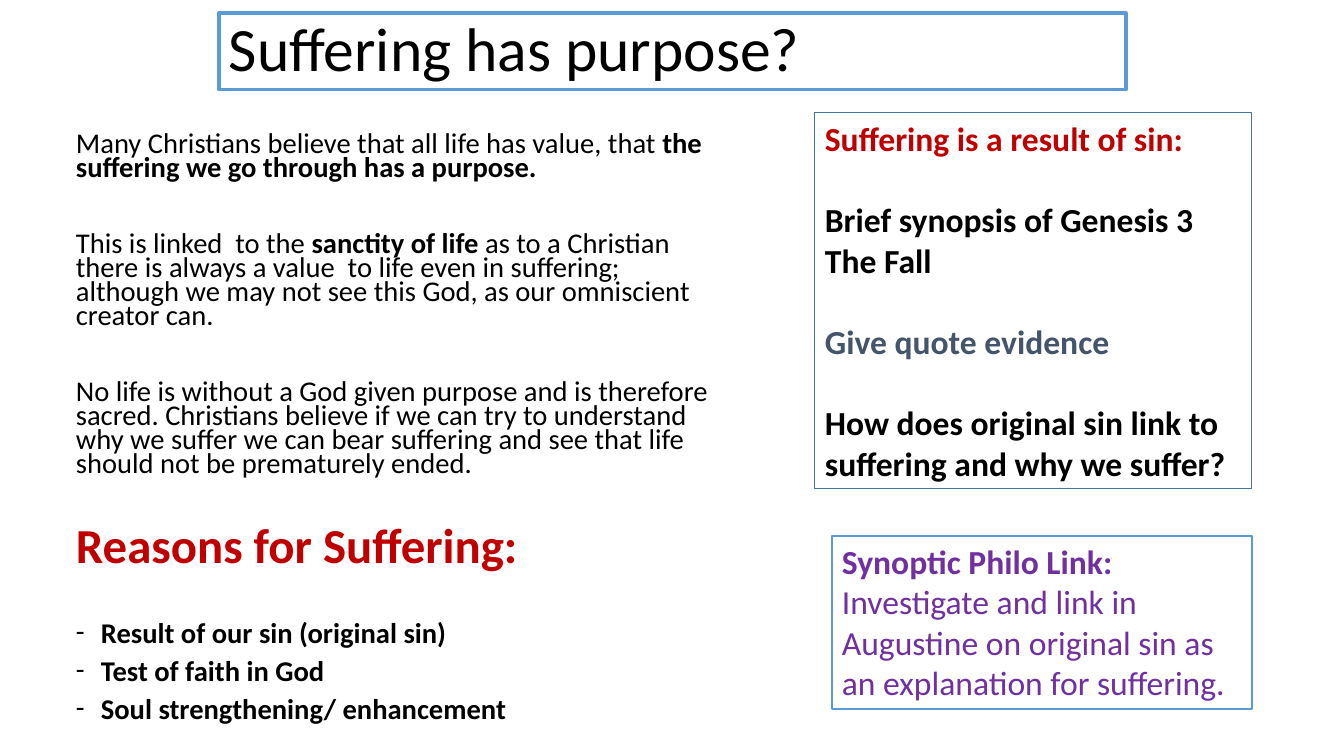
from lxml.etree import SubElement
from pptx import Presentation
from pptx.dml.color import RGBColor
from pptx.enum.shapes import MSO_SHAPE
from pptx.enum.text import MSO_ANCHOR, PP_ALIGN
from pptx.oxml.ns import qn
from pptx.util import Pt

PX = 914400 / 100.8
FONT = "Calibri"
COLOURS = {
    "black": "000000",
    "red": "C00000",
    "slate": "44546A",
    "purple": "7030A0",
    "blue": "5B9BD5",
    "dark_blue": "43739E",
}
BODY_SIZE = 20.4
PROMPT_SIZE = 24
SECTION_GAP = 37.4
BULLET_GAP = 10
PROMPT_GAP = 29.3
BULLET_INDENT = 25

ARGUMENTS = [
    [("Many Christians believe that all life has value, that ", False),
     ("the suffering we go through has a purpose.", True)],
    [("This is linked  to the ", False),
     ("sanctity of life ", True),
     ("as to a Christian there is always a value  to life even in suffering; "
      "although we may not see this God, as our omniscient creator can.", False)],
    [("No life is without a God given purpose and is therefore sacred. "
      "Christians believe if we can try to understand why we suffer we can bear "
      "suffering and see that life should not be prematurely ended.", False)],
]
REASONS = [
    "Result of our sin (original sin)",
    "Test of faith in God",
    "Soul strengthening/ enhancement",
]
SIN_PROMPTS = [
    ("Suffering is a result of sin:", "red"),
    ("Brief synopsis of Genesis 3 The Fall", "black"),
    ("Give quote evidence", "slate"),
    ("How does original sin link to suffering and why we suffer?", "black"),
]
SYNOPTIC_LINK = [
    ("Synoptic Philo Link: ", True),
    ("Investigate and link in Augustine on original sin as an explanation "
     "for suffering.", False),
]


def px(length):
    return round(length * PX)


def rgb(colour):
    return RGBColor.from_string(COLOURS[colour])


def add_frame(slide, box, line_colour, line_width):
    """Add an unfilled outlined rectangle and return its text frame."""
    frame = slide.shapes.add_shape(MSO_SHAPE.RECTANGLE, *map(px, box))
    frame.shadow.inherit = False
    frame.fill.background()
    frame.line.color.rgb = rgb(line_colour)
    frame.line.width = Pt(line_width)
    frame.text_frame.word_wrap = True
    return frame.text_frame


def add_paragraph(text_frame, runs, size, colour="black", **layout):
    """Write (text, bold) runs as the next paragraph of the frame."""
    first = text_frame.paragraphs[0]
    paragraph = text_frame.add_paragraph() if first.runs else first
    for name, value in {"alignment": PP_ALIGN.LEFT, **layout}.items():
        setattr(paragraph, name, value)
    for text, bold in runs:
        run = paragraph.add_run()
        run.text = text
        for name, value in {"name": FONT, "size": Pt(size), "bold": bold}.items():
            setattr(run.font, name, value)
        run.font.color.rgb = rgb(colour)
    return paragraph


def add_dash(paragraph):
    properties = paragraph._p.get_or_add_pPr()
    properties.set("marL", str(px(BULLET_INDENT)))
    properties.set("indent", str(-px(BULLET_INDENT)))
    SubElement(properties, qn("a:buFont"), typeface=FONT)
    SubElement(properties, qn("a:buChar"), char="-")


def title_region(slide, box):
    title = add_frame(slide, box, "blue", 2.25)
    title.vertical_anchor = MSO_ANCHOR.MIDDLE
    add_paragraph(title, [("Suffering has purpose?", False)], 44, line_spacing=0.9)


def argument_region(slide, box):
    argument = slide.shapes.add_textbox(*map(px, box)).text_frame
    argument.word_wrap = True
    section = {"line_spacing": 0.7, "space_before": Pt(SECTION_GAP)}
    bullet = {**section, "space_before": Pt(BULLET_GAP)}
    for index, runs in enumerate(ARGUMENTS):
        add_paragraph(argument, runs, BODY_SIZE, **(section if index else bullet))
    add_paragraph(argument, [("Reasons for Suffering:", True)], 34.9, "red", **section)
    for index, reason in enumerate(REASONS):
        layout = bullet if index else section
        add_dash(add_paragraph(argument, [(reason, True)], BODY_SIZE, **layout))


def sin_region(slide, box):
    prompts = add_frame(slide, box, "dark_blue", 0.75)
    prompts.vertical_anchor = MSO_ANCHOR.TOP
    for index, (prompt, colour) in enumerate(SIN_PROMPTS):
        add_paragraph(prompts, [(prompt, True)], PROMPT_SIZE, colour,
                      space_before=Pt(PROMPT_GAP if index else 0))


def synoptic_region(slide, box):
    synoptic = add_frame(slide, box, "blue", 1.75)
    synoptic.vertical_anchor = MSO_ANCHOR.TOP
    add_paragraph(synoptic, SYNOPTIC_LINK, PROMPT_SIZE, "purple")


def main():
    presentation = Presentation()
    presentation.slide_width = px(1344)
    presentation.slide_height = px(756)
    slide = presentation.slides.add_slide(presentation.slide_layouts[6])
    title_region(slide, (219, 13, 907, 77))
    argument_region(slide, (66, 129, 665, 627))
    sin_region(slide, (815, 113, 437, 376))
    synoptic_region(slide, (832, 536, 420, 173))
    presentation.save("out.pptx")


if __name__ == "__main__":
    main()
